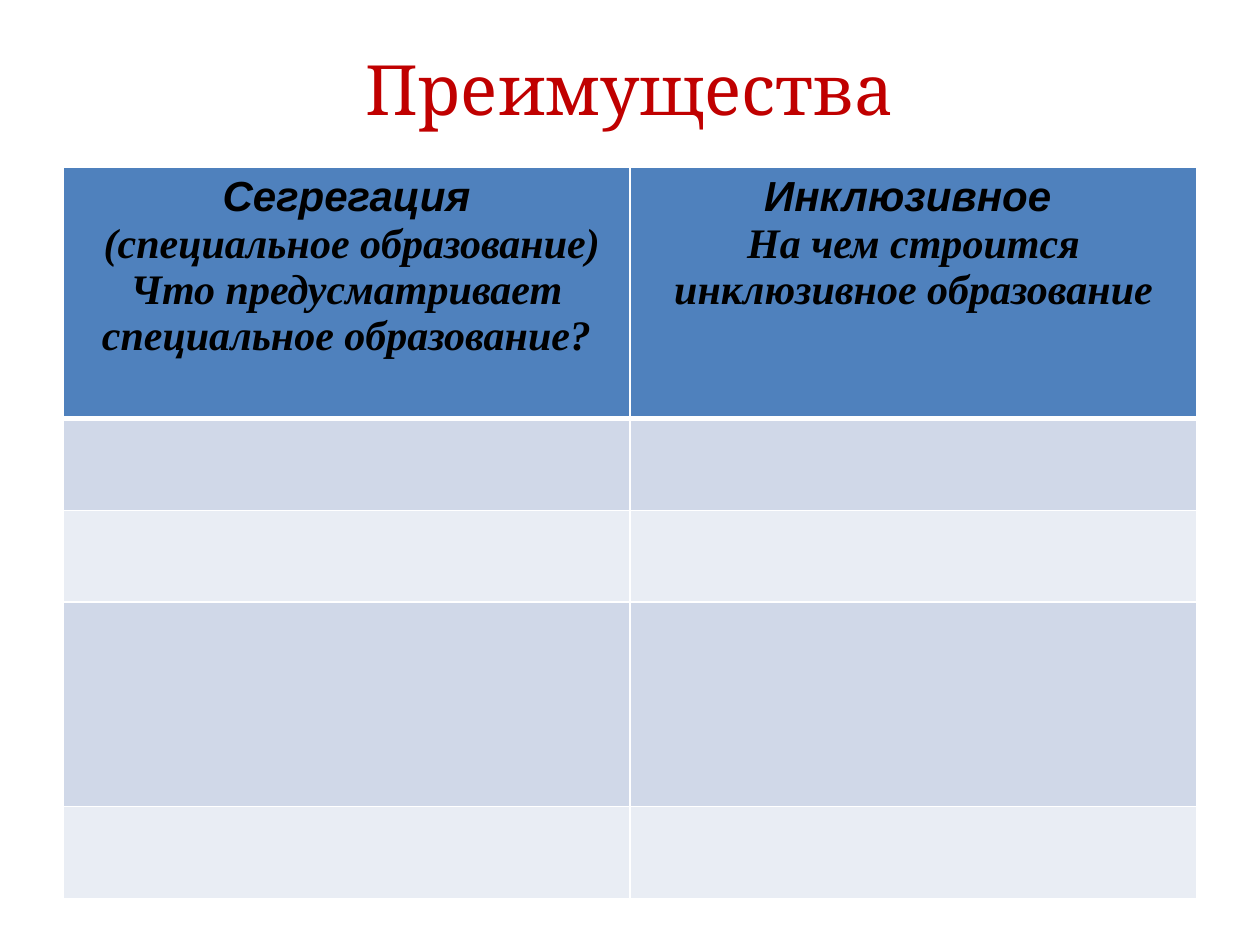
from typing import NamedTuple

import pptx
import pptx.dml.color
import pptx.enum.text
import pptx.oxml
import pptx.oxml.ns
import pptx.util
from pptx.util import Inches

ALIGN = pptx.enum.text.PP_ALIGN
ANCHOR = pptx.enum.text.MSO_ANCHOR


class Line(NamedTuple):
    text: str
    font: str


class Row(NamedTuple):
    height: float
    fill: str


HEADS = [
    [
        Line("Сегрегация", "Arial"),
        Line(" (специальное образование)", "Times New Roman"),
        Line("Что предусматривает специальное образование?", "Times New Roman"),
    ],
    [
        Line("Инклюзивное ", "Arial"),
        Line("На чем строится инклюзивное образование", "Times New Roman"),
    ],
]
DARK, LIGHT = "D0D8E8", "E9EDF4"
ROWS = [
    Row(1.99, "4F81BD"),
    Row(0.73, DARK),
    Row(0.73, LIGHT),
    Row(1.62, DARK),
    Row(0.73, LIGHT),
]


def color(code: str) -> pptx.dml.color.RGBColor:
    return pptx.dml.color.RGBColor.from_string(code)


def write(par, text: str, *, font: str, size: float, ink: str,
          bold: bool = False, italic: bool = False) -> None:
    """Put one centred run of text into a paragraph."""
    par.alignment = ALIGN.CENTER
    run = par.add_run()
    run.text = text
    run.font.name = font
    run.font.size = pptx.util.Pt(size)
    run.font.color.rgb = color(ink)
    run.font.bold = bold
    run.font.italic = italic


def border(cell, widths: dict[str, float], ink: str = "FFFFFF") -> None:
    """Draw the cell's sides, given in the order L, R, T, B."""
    props = cell._tc.get_or_add_tcPr()
    space = pptx.oxml.ns.nsdecls("a")
    for side, width in widths.items():
        props.append(pptx.oxml.parse_xml(
            f'<a:ln{side} {space} w="{pptx.util.Pt(width)}"><a:solidFill>'
            f'<a:srgbClr val="{ink}"/></a:solidFill></a:ln{side}>'))


def add_title(slide, text: str) -> None:
    box = slide.shapes.add_textbox(Inches(0.5), Inches(0.3), Inches(9), Inches(0.79))
    frame = box.text_frame
    frame.word_wrap = True
    frame.vertical_anchor = ANCHOR.MIDDLE
    write(frame.paragraphs[0], text, font="Cambria", size=39.6, ink="C00000")


def add_grid(slide, heads: list[list[Line]], rows: list[Row]) -> None:
    total = sum(row.height for row in rows)
    table = slide.shapes.add_table(
        len(rows), len(heads), Inches(0.5), Inches(1.33), Inches(9), Inches(total)).table

    # Row heights, fills and borders; a thick rule separates the header
    for i, row in enumerate(rows):
        table.rows[i].height = Inches(row.height)
        for cell in table.rows[i].cells:
            border(cell, {"L": 1, "R": 1, "T": 3 if i == 1 else 1, "B": 3 if i == 0 else 1})
            cell.fill.solid()
            cell.fill.fore_color.rgb = color(row.fill)

    # Header text
    for col, lines in enumerate(heads):
        frame = table.cell(0, col).text_frame
        for i, line in enumerate(lines):
            par = frame.add_paragraph() if i else frame.paragraphs[0]
            write(par, line.text, font=line.font, size=24, ink="000000",
                  bold=True, italic=True)


def main() -> None:
    deck = pptx.Presentation()
    deck.slide_width, deck.slide_height = Inches(10), Inches(7.5)
    slide = deck.slides.add_slide(deck.slide_layouts[6])
    add_grid(slide, HEADS, ROWS)
    add_title(slide, "Преимущества")
    deck.save("out.pptx")


if __name__ == "__main__":
    main()
